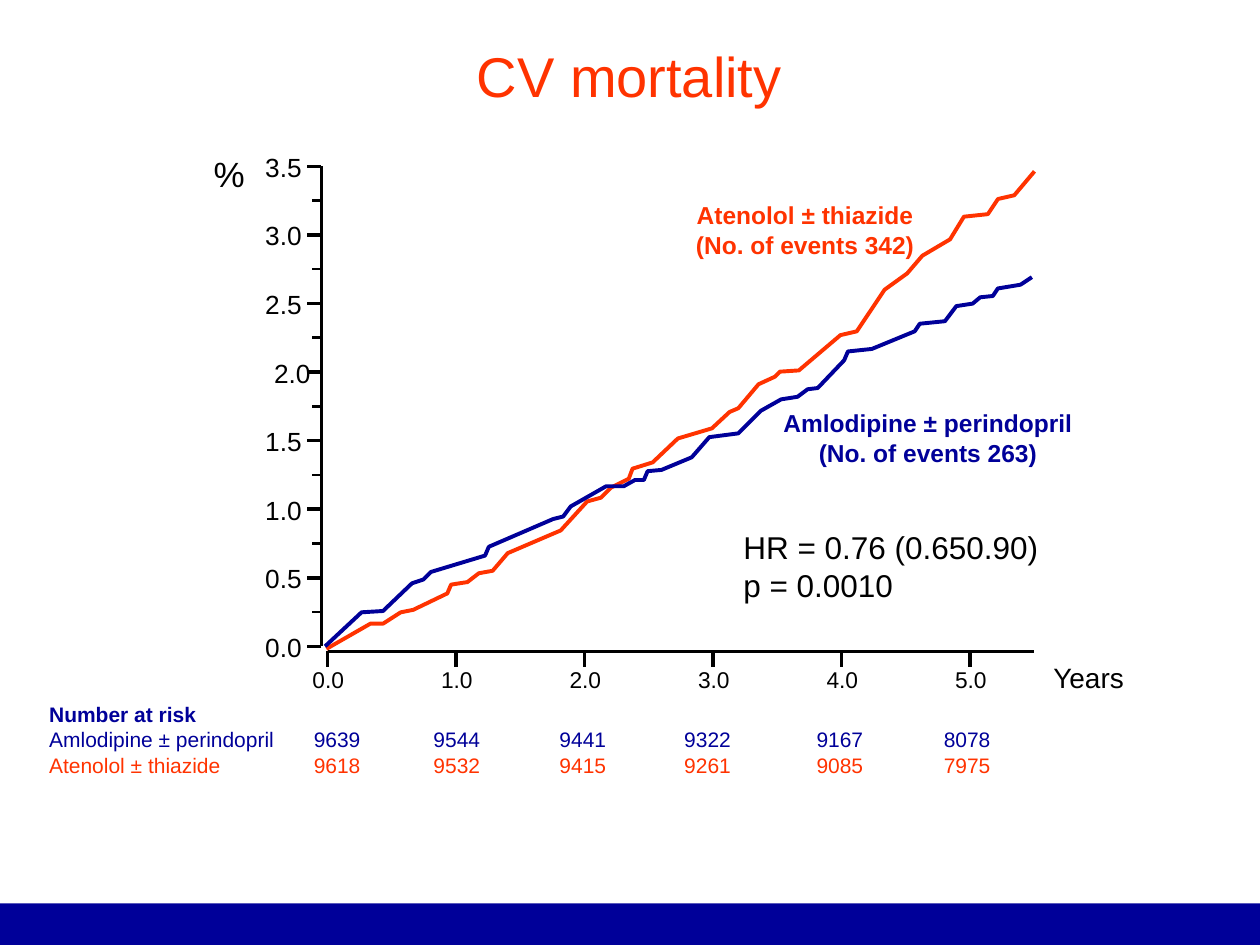
from lxml import etree
from pptx import Presentation
from pptx.dml.color import RGBColor
from pptx.enum.shapes import MSO_CONNECTOR as Connector, MSO_SHAPE as Shape
from pptx.enum.text import MSO_ANCHOR as Anchor, PP_ALIGN as Align
from pptx.oxml.ns import qn
from pptx.util import Inches, Pt

NAVY = RGBColor(0x00, 0x00, 0x99)
ORANGE = RGBColor(0xFF, 0x33, 0x00)
BLACK = RGBColor(0x00, 0x00, 0x00)

AXIS_X, AXIS_TOP, AXIS_BOTTOM = 2.55, 1.32, 5.13
YEARS_Y, YEARS_LEFT, YEARS_RIGHT = 5.17, 2.6, 8.21
YEAR_STEP = 1.02
HALF_PERCENT = (AXIS_BOTTOM - AXIS_TOP) / 7

ATENOLOL = [
    (2.59, 5.15), (2.94, 4.95), (3.04, 4.95), (3.18, 4.86), (3.28, 4.84),
    (3.55, 4.71), (3.58, 4.64), (3.71, 4.62), (3.8, 4.55), (3.91, 4.53),
    (4.03, 4.39), (4.45, 4.21), (4.66, 3.98), (4.77, 3.95), (4.85, 3.87),
    (4.99, 3.8), (5.02, 3.72), (5.18, 3.67), (5.38, 3.48), (5.65, 3.4),
    (5.79, 3.27), (5.86, 3.24), (6.02, 3.05), (6.15, 2.99), (6.19, 2.95),
    (6.34, 2.94), (6.67, 2.66), (6.8, 2.63), (7.02, 2.3), (7.2, 2.17),
    (7.32, 2.03), (7.54, 1.9), (7.65, 1.72), (7.84, 1.7), (7.92, 1.58),
    (8.05, 1.55), (8.21, 1.36),
]
AMLODIPINE = [
    (2.58, 5.13), (2.87, 4.86), (3.04, 4.85), (3.27, 4.63), (3.36, 4.6),
    (3.42, 4.54), (3.85, 4.41), (3.88, 4.34), (4.39, 4.12), (4.47, 4.1),
    (4.53, 4.02), (4.81, 3.86), (4.95, 3.86), (5.04, 3.81), (5.11, 3.81),
    (5.14, 3.74), (5.25, 3.73), (5.49, 3.63), (5.63, 3.47), (5.86, 3.44),
    (6.04, 3.26), (6.2, 3.17), (6.33, 3.15), (6.41, 3.09), (6.49, 3.08),
    (6.7, 2.86), (6.73, 2.79), (6.92, 2.77), (7.26, 2.63), (7.3, 2.57),
    (7.5, 2.55), (7.59, 2.43), (7.72, 2.41), (7.78, 2.36), (7.88, 2.35),
    (7.92, 2.29), (8.1, 2.26), (8.19, 2.2),
]
RISK_TABS = [2.1, 3.05, 4.05, 5.04, 6.09, 7.1]
RISK_ROWS = [
    ("Amlodipine ± perindopril", [9639, 9544, 9441, 9322, 9167, 8078], NAVY),
    ("Atenolol ± thiazide", [9618, 9532, 9415, 9261, 9085, 7975], ORANGE),
]


class Painter:
    """Draws styled elements on the current page."""

    font = "Arial"

    def __init__(self, page):
        self.page = page

    def text(self, lines, left, top, width, height, size, color=BLACK,
             bold=False, align=Align.CENTER, wrap=False, inset=0,
             anchor=Anchor.TOP):
        box = self.page.shapes.add_textbox(
            Inches(left), Inches(top), Inches(width), Inches(height))
        frame = box.text_frame
        frame.word_wrap = wrap
        frame.vertical_anchor = anchor
        frame.margin_left = frame.margin_right = Inches(inset)
        frame.margin_top = frame.margin_bottom = Inches(inset)
        frame.text = "\n".join(lines)
        for para in frame.paragraphs:
            para.alignment = align
            para.font.name = self.font
            para.font.size = Pt(size)
            para.font.bold = bold
            para.font.color.rgb = color
        return frame.paragraphs

    def tabs(self, para, stops):
        properties = para._p.get_or_add_pPr()
        tab_list = etree.Element(qn("a:tabLst"))
        for stop in stops:
            etree.SubElement(tab_list, qn("a:tab"),
                             pos=str(Inches(stop)), algn="l")
        # The schema puts tab stops before the default run properties
        properties.find(qn("a:defRPr")).addprevious(tab_list)

    def line(self, x1, y1, x2, y2, weight=2):
        line = self.page.shapes.add_connector(
            Connector.STRAIGHT, Inches(x1), Inches(y1), Inches(x2), Inches(y2))
        line.line.color.rgb = BLACK
        line.line.width = Pt(weight)
        etree.SubElement(line._element.spPr, qn("a:effectLst"))

    def curve(self, points, color):
        points = [(Inches(x), Inches(y)) for x, y in points]
        builder = self.page.shapes.build_freeform(*points[0])
        builder.add_line_segments(points[1:], close=False)
        curve = builder.convert_to_shape()
        curve.shadow.inherit = False
        curve.fill.background()
        curve.line.color.rgb = color
        curve.line.width = Pt(2.25)

    def bar(self, left, top, width, height, color):
        bar = self.page.shapes.add_shape(
            Shape.RECTANGLE, Inches(left), Inches(top), Inches(width), Inches(height))
        bar.shadow.inherit = False
        bar.fill.solid()
        bar.fill.fore_color.rgb = color
        bar.line.fill.background()


def main():
    deck = Presentation()
    deck.slide_width, deck.slide_height = Inches(10), Inches(7.5)
    painter = Painter(deck.slides.add_slide(deck.slide_layouts[6]))

    # Footer band and title
    painter.bar(0, 7.17, 10, 0.33, NAVY)
    title, = painter.text(["CV mortality"], 0.84, 0.4, 8.31, 0.46, 32, ORANGE,
                          wrap=True, anchor=Anchor.MIDDLE)
    title.line_spacing = 0.9

    # Number at risk
    lines = ["Number at risk"]
    lines += ["\t".join([name, *map(str, counts)]) for name, counts, _ in RISK_ROWS]
    heading, *rows = painter.text(lines, 0.37, 5.55, 8.62, 0.64, 12, NAVY,
                                  align=Align.LEFT, wrap=True, inset=0.02)
    heading.font.bold = True
    for para, (_, _, color) in zip(rows, RISK_ROWS):
        para.font.color.rgb = color
        painter.tabs(para, RISK_TABS)

    # Years axis
    painter.line(YEARS_LEFT, YEARS_Y, YEARS_RIGHT, YEARS_Y)
    for year in range(6):
        x = YEARS_LEFT + year * YEAR_STEP
        painter.line(x, YEARS_Y, x, YEARS_Y + 0.12)
        painter.text([f"{year:.1f}"], x - 0.12, 5.28, 0.25, 0.22, 13)
    painter.text(["Years"], 8.35, 5.24, 0.58, 0.27, 16)

    # Percent axis, with a minor tick above each major one but the last
    painter.line(AXIS_X, AXIS_TOP, AXIS_X, AXIS_BOTTOM)
    for step in range(8):
        y = AXIS_BOTTOM - step * HALF_PERCENT
        painter.line(AXIS_X, y, AXIS_X - 0.11, y)
        label_left = 2.17 if step == 4 else 2.1
        painter.text([f"{step / 2:.1f}"], label_left, y - 0.12, 0.3, 0.26, 15)
        if step < 7:
            middle = y - HALF_PERCENT / 2
            painter.line(AXIS_X, middle, AXIS_X - 0.07, middle, 1.5)
    painter.text(["%"], 1.32, 0.88, 1, 1, 20, inset=0.02, anchor=Anchor.MIDDLE)

    # Curves and their labels
    painter.curve(ATENOLOL, ORANGE)
    painter.curve(AMLODIPINE, NAVY)
    painter.text(["Amlodipine ± perindopril", "(No. of events 263)"],
                 6.21, 3.24, 2.31, 0.47, 14, NAVY, bold=True)
    painter.text(["Atenolol ± thiazide", "(No. of events 342)"],
                 5.52, 1.59, 1.74, 0.47, 14, ORANGE, bold=True)
    painter.text(["HR = 0.76 (0.650.90)", "p = 0.0010"],
                 5.9, 4.19, 2.36, 0.61, 18, align=Align.LEFT)

    deck.save("out.pptx")


if __name__ == "__main__":
    main()
